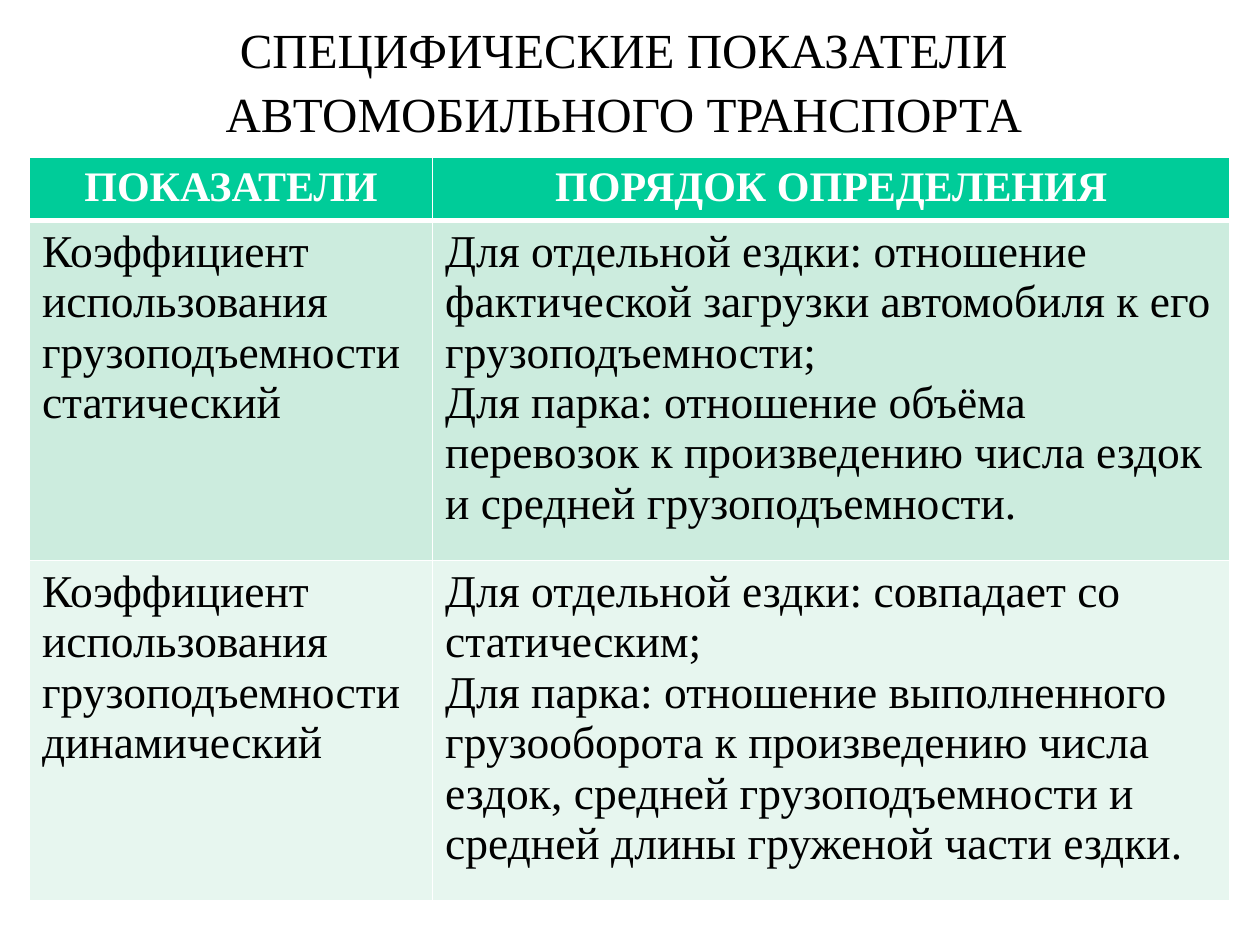
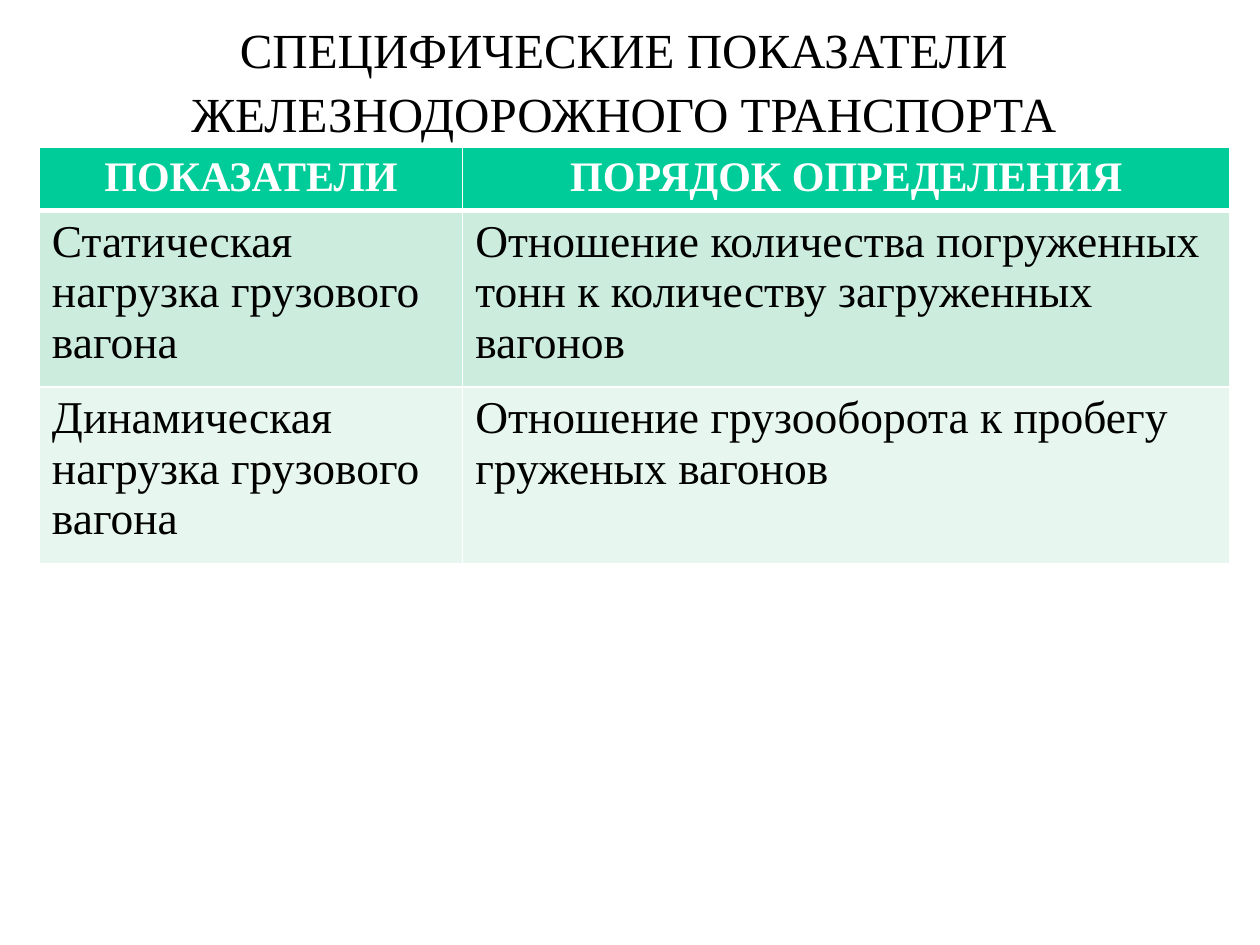
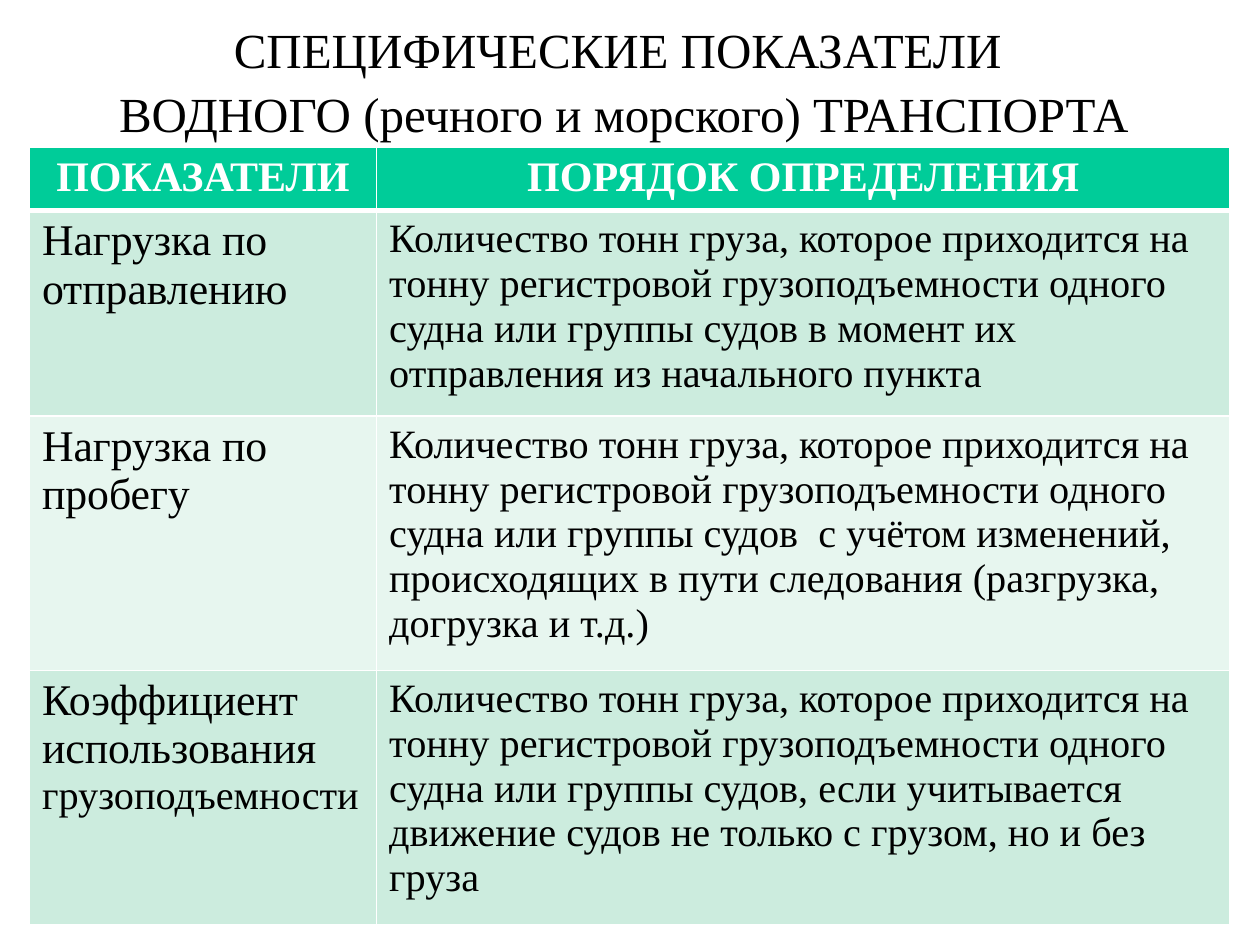
from dataclasses import dataclass

from lxml import etree
from pptx import Presentation
from pptx.dml.color import RGBColor
from pptx.enum.text import MSO_ANCHOR, MSO_AUTO_SIZE, PP_ALIGN
from pptx.oxml.ns import qn
from pptx.slide import Slide
from pptx.table import _Cell
from pptx.text.text import _Paragraph
from pptx.util import Pt

CENTER = PP_ALIGN.CENTER
LEFT = PP_ALIGN.LEFT
MIDDLE = MSO_ANCHOR.MIDDLE
NO_AUTOFIT = MSO_AUTO_SIZE.NONE

COLORS = {
    "ink": "000000",
    "paper": "FFFFFF",
    "header": "00CC99",
    "odd_row": "CCECDE",
    "even_row": "E7F6EF",
}
FONT = "Times New Roman"
TITLE_SIZE = 28
HEADER_SIZE = 24
HEADER_HEIGHT = 36
TABLE_RIGHT = 702.8
THIN, THICK = 1, 3
TITLE_ONLY = 5
HEADINGS = ("ПОКАЗАТЕЛИ", "ПОРЯДОК ОПРЕДЕЛЕНИЯ")
TONNAGE = (
    "Количество тонн груза, которое приходится на тонну регистровой "
    "грузоподъемности одного судна или группы судов"
)


@dataclass(frozen=True)
class Run:
    text: str
    size: float
    color: str = "ink"
    bold: bool = False


@dataclass(frozen=True)
class Indicator:
    height: float
    name: list[Run]
    definition: list[Run]


@dataclass(frozen=True)
class TransportSlide:
    title_lines: list[str]
    left: float
    top: float
    name_width: float
    indicators: list[Indicator]


TRANSPORT_SLIDES = [
    TransportSlide(
        ["СПЕЦИФИЧЕСКИЕ ПОКАЗАТЕЛИ АВТОМОБИЛЬНОГО ТРАНСПОРТА"],
        16.8, 90, 230.4,
        [
            Indicator(
                194.4,
                [Run("Коэффициент использования грузоподъемности статический", 26)],
                [
                    Run("Для отдельной ездки: отношение фактической загрузки "
                        "автомобиля к его грузоподъемности;", 26),
                    Run("Для парка: отношение объёма перевозок к произведению "
                        "числа ездок и средней грузоподъемности.", 26),
                ],
            ),
            Indicator(
                194.4,
                [Run("Коэффициент использования грузоподъемности динамический", 26)],
                [
                    Run("Для отдельной ездки: совпадает со статическим;", 26),
                    Run("Для парка: отношение выполненного грузооборота к "
                        "произведению числа ездок, средней грузоподъемности и "
                        "средней длины груженой части ездки.", 26),
                ],
            ),
        ],
    ),
    TransportSlide(
        ["СПЕЦИФИЧЕСКИЕ ПОКАЗАТЕЛИ ЖЕЛЕЗНОДОРОЖНОГО ТРАНСПОРТА"],
        22.5, 84.4, 241.9,
        [
            Indicator(
                100.8,
                [Run("Статическая нагрузка грузового вагона", 26)],
                [Run("Отношение количества погруженных тонн к количеству "
                     "загруженных вагонов", 26)],
            ),
            Indicator(
                100.8,
                [Run("Динамическая нагрузка грузового вагона", 26)],
                [Run("Отношение грузооборота к пробегу груженых вагонов", 26)],
            ),
        ],
    ),
    TransportSlide(
        ["СПЕЦИФИЧЕСКИЕ ПОКАЗАТЕЛИ ", "ВОДНОГО (речного и морского) ТРАНСПОРТА"],
        16.8, 84.4, 198.4,
        [
            Indicator(
                117.4,
                [Run("Нагрузка по отправлению", 25)],
                [Run(f"{TONNAGE} в момент их отправления из начального пункта", 23)],
            ),
            Indicator(
                145.4,
                [Run("Нагрузка по пробегу", 25)],
                [Run(f"{TONNAGE}  с учётом изменений, происходящих в пути "
                     "следования (разгрузка, догрузка и т.д.)", 23)],
            ),
            Indicator(
                145.4,
                [Run("Коэффициент использования ", 25), Run("грузоподъемности", 23)],
                [Run(f"{TONNAGE}, если учитывается движение судов не только с "
                     "грузом, но и без груза", 23)],
            ),
        ],
    ),
]


def add_run(paragraph: _Paragraph, run: Run) -> None:
    added = paragraph.add_run()
    added.text = run.text
    added.font.name = FONT
    added.font.size = Pt(run.size)
    added.font.bold = run.bold
    added.font.color.rgb = RGBColor.from_string(COLORS[run.color])


def add_title(slide: Slide, lines: list[str]) -> None:
    title = slide.shapes.title
    title.left, title.top, title.width, title.height = Pt(50.4), Pt(0), Pt(612), Pt(90)
    frame = title.text_frame
    frame.auto_size = NO_AUTOFIT
    frame.word_wrap = True
    frame.vertical_anchor = MIDDLE
    paragraph = frame.paragraphs[0]
    paragraph.alignment = CENTER
    paragraph.line_spacing = 1.09
    for index, line in enumerate(lines):
        if index:
            paragraph.add_line_break()
        add_run(paragraph, Run(line, TITLE_SIZE))


def set_borders(cell: _Cell, top: float, bottom: float) -> None:
    properties = cell._tc.get_or_add_tcPr()
    widths = {"a:lnL": THIN, "a:lnR": THIN, "a:lnT": top, "a:lnB": bottom}
    for position, (tag, width) in enumerate(widths.items()):
        border = etree.Element(qn(tag), w=str(Pt(width)))
        fill = etree.SubElement(border, qn("a:solidFill"))
        etree.SubElement(fill, qn("a:srgbClr"), val=COLORS["paper"])
        properties.insert(position, border)


def fill_cell(cell: _Cell, paragraphs: list[list[Run]], fill: str,
              alignment: PP_ALIGN, top: float, bottom: float) -> None:
    cell.fill.solid()
    cell.fill.fore_color.rgb = RGBColor.from_string(COLORS[fill])
    cell.margin_left = cell.margin_right = Pt(7.2)
    cell.margin_top = cell.margin_bottom = Pt(3.6)
    set_borders(cell, top, bottom)
    frame = cell.text_frame
    for index, runs in enumerate(paragraphs):
        paragraph = frame.add_paragraph() if index else frame.paragraphs[0]
        paragraph.alignment = alignment
        for run in runs:
            add_run(paragraph, run)


def add_indicator_table(slide: Slide, content: TransportSlide) -> None:
    heights = [HEADER_HEIGHT] + [item.height for item in content.indicators]
    width = TABLE_RIGHT - content.left
    table = slide.shapes.add_table(
        len(heights), len(HEADINGS),
        Pt(content.left), Pt(content.top), Pt(width), Pt(sum(heights)),
    ).table
    table.horz_banding = False
    table.columns[0].width = Pt(content.name_width)
    table.columns[1].width = Pt(width - content.name_width)
    for row, height in zip(table.rows, heights):
        row.height = Pt(height)
    for column, heading in enumerate(HEADINGS):
        heading_run = Run(heading, HEADER_SIZE, "paper", True)
        fill_cell(table.cell(0, column), [[heading_run]], "header", CENTER, THIN, THICK)
    for row, item in enumerate(content.indicators, start=1):
        fill = "odd_row" if row % 2 else "even_row"
        top = THICK if row == 1 else THIN
        definition = [[run] for run in item.definition]
        for column, paragraphs in enumerate(([item.name], definition)):
            fill_cell(table.cell(row, column), paragraphs, fill, LEFT, top, THIN)


def main() -> None:
    presentation = Presentation()
    presentation.slide_width, presentation.slide_height = Pt(720), Pt(540)
    for content in TRANSPORT_SLIDES:
        slide = presentation.slides.add_slide(presentation.slide_layouts[TITLE_ONLY])
        add_title(slide, content.title_lines)
        add_indicator_table(slide, content)
    presentation.save("out.pptx")


if __name__ == "__main__":
    main()
